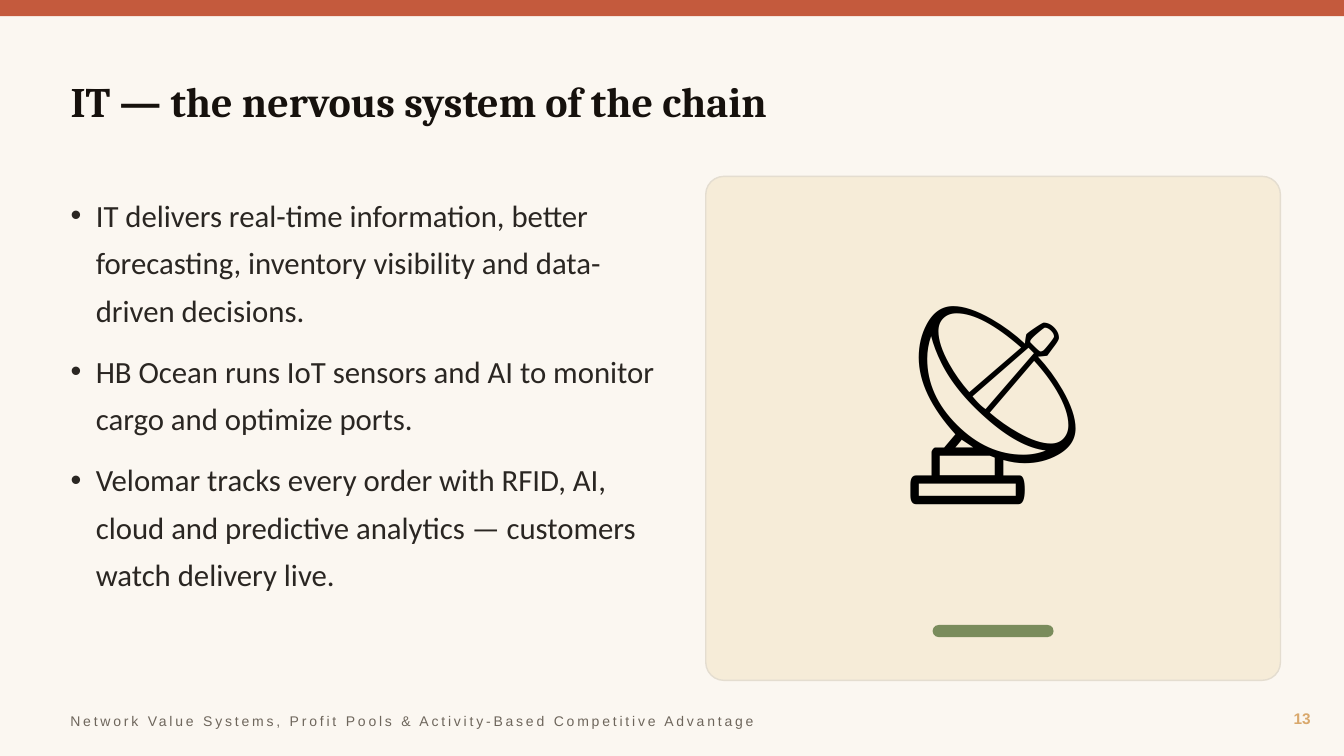
from pptx import Presentation
from pptx.dml.color import RGBColor
from pptx.enum.shapes import MSO_SHAPE as Shape
from pptx.enum.text import MSO_ANCHOR as Anchor, MSO_AUTO_SIZE as AutoSize, PP_ALIGN as Align
from pptx.util import Inches, Pt
from lxml import etree
from pptx.oxml.ns import qn

WIDTH, HEIGHT = 13.33, 7.5
MARGIN = 0.6
CARD_LEFT, CARD_TOP, CARD_WIDTH, CARD_HEIGHT = 7, 1.75, 5.7, 5
ACCENT_WIDTH = 1.2

deck = Presentation()
deck.slide_width, deck.slide_height = Inches(WIDTH), Inches(HEIGHT)
page = deck.slides.add_slide(deck.slide_layouts[1])


def color(hex_text):
    return RGBColor.from_string(hex_text)


def write(box, place, text, size, font, hex_text, bold=False, align=Align.LEFT):
    """Place a text box or placeholder and fill its first paragraph."""
    box.left, box.top, box.width, box.height = map(Inches, place)
    frame = box.text_frame
    frame.word_wrap = True
    frame.auto_size = AutoSize.NONE
    frame.vertical_anchor = Anchor.MIDDLE
    para = frame.paragraphs[0]
    para.alignment = align
    span = para.add_run()
    span.text = text
    span.font.size, span.font.name, span.font.bold = Pt(size), font, bold
    span.font.color.rgb = color(hex_text)
    return span


# Background, top band, card and accent bar
page.background.fill.solid()
page.background.fill.fore_color.rgb = color("FBF7F1")
accent_left = CARD_LEFT + (CARD_WIDTH - ACCENT_WIDTH) / 2
for kind, place, fill, line, rounding in [
    (Shape.RECTANGLE, (0, 0, WIDTH, 0.16), "C45A3D", None, None),
    (Shape.ROUNDED_RECTANGLE, (CARD_LEFT, CARD_TOP, CARD_WIDTH, CARD_HEIGHT), "F6ECD8", "E4DDD0", 0.036),
    (Shape.ROUNDED_RECTANGLE, (accent_left, 6.2, ACCENT_WIDTH, 0.12), "7A8C5C", None, 0.5),
]:
    panel = page.shapes.add_shape(kind, *map(Inches, place))
    panel.shadow.inherit = False
    panel.fill.solid()
    panel.fill.fore_color.rgb = color(fill)
    if line:
        panel.line.color.rgb = color(line)
        panel.line.width = Pt(1)
    else:
        panel.line.fill.background()
    if rounding:
        panel.adjustments[0] = rounding

# Title
write(page.shapes.title, (MARGIN, 0.5, 12.1, 1),
      "IT — the nervous system of the chain", 30, "Cambria", "16110D", bold=True)

# Bullet list
points = [
    "IT delivers real-time information, better forecasting, inventory visibility and data-driven decisions.",
    "HB Ocean runs IoT sensors and AI to monitor cargo and optimize ports.",
    "Velomar tracks every order with RFID, AI, cloud and predictive analytics — customers watch delivery live.",
]
body = page.placeholders[1]
write(body, (MARGIN, 1.8, 6, 5), points[0], 22, "Calibri", "2A2622")
body.text_frame.vertical_anchor = Anchor.TOP
for point in points[1:]:
    span = body.text_frame.add_paragraph().add_run()
    span.text = point
    span.font.size, span.font.name = Pt(22), "Calibri"
    span.font.color.rgb = color("2A2622")
for para in body.text_frame.paragraphs:
    para.line_spacing = 1.28
    para.space_before, para.space_after = Pt(0), Pt(10)
    settings = para._p.get_or_add_pPr()
    settings.set("marL", str(Inches(0.25)))
    settings.set("indent", str(-Inches(0.25)))
    etree.SubElement(settings, qn("a:buChar")).set("char", "•")

# Card icon, page number and footer
icon_box, number_box, footer_box = [page.shapes.add_textbox(0, 0, 0, 0) for _ in range(3)]
write(icon_box, (CARD_LEFT, CARD_TOP, CARD_WIDTH, 4.1), "📡", 150, "Calibri", "000000", align=Align.CENTER)
write(number_box, (12.2, 6.95, 0.9, 0.35), "13", 11, "Arial", "D9A86C", bold=True, align=Align.RIGHT)
footer = write(footer_box, (MARGIN, 7, 8, 0.3),
               "Network Value Systems, Profit Pools & Activity-Based Competitive Advantage",
               10, "Arial", "6E665C")
footer._r.get_or_add_rPr().set("spc", "200")

deck.save("out.pptx")
